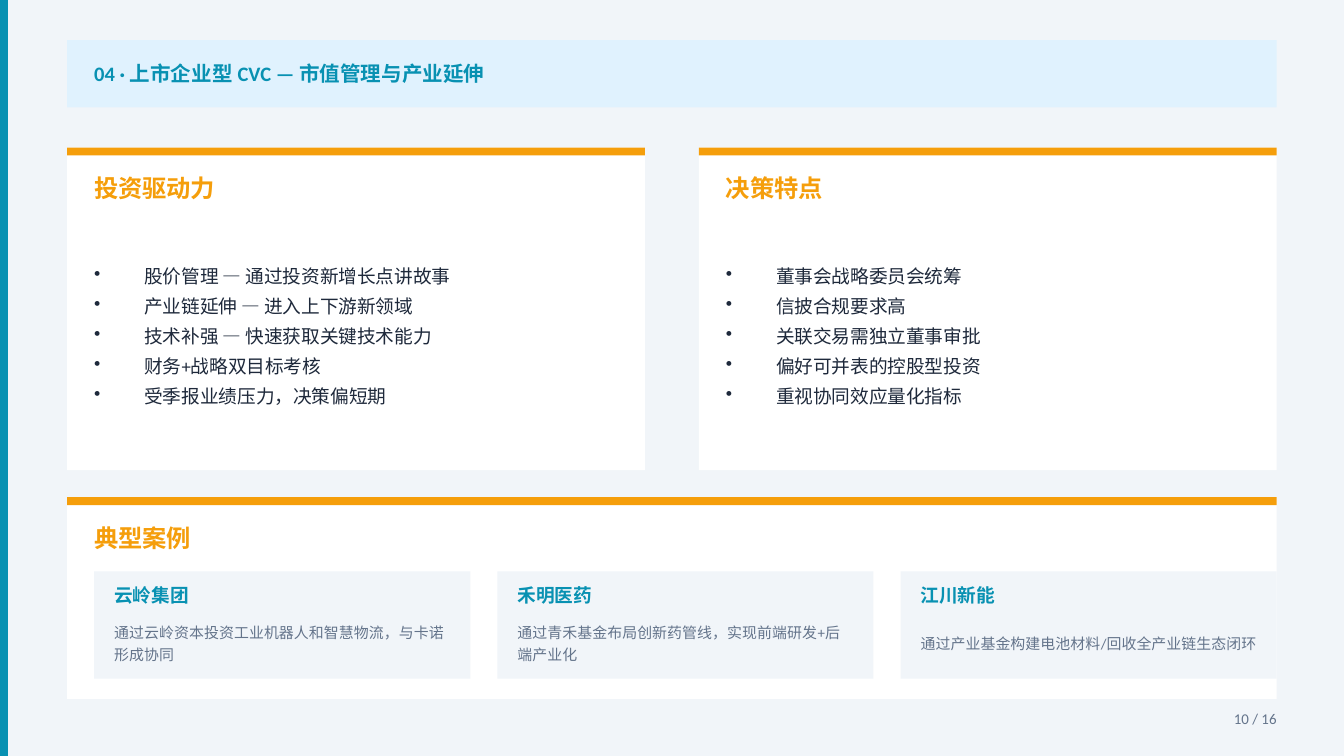
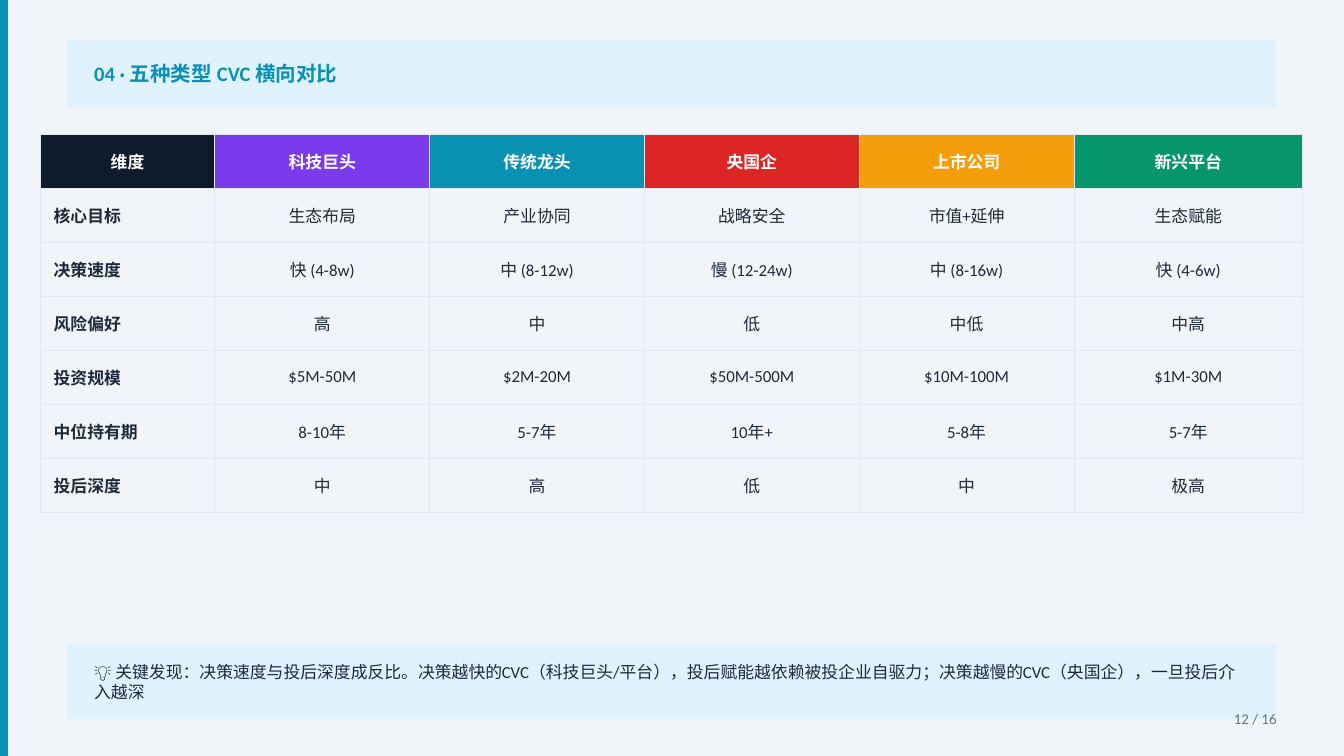
from dataclasses import dataclass

from lxml import etree
from pptx import Presentation
from pptx.dml.color import RGBColor
from pptx.enum.shapes import MSO_SHAPE
from pptx.enum.text import MSO_ANCHOR, PP_ALIGN
from pptx.oxml.ns import qn
from pptx.slide import Slide
from pptx.table import _Cell
from pptx.text.text import TextFrame
from pptx.util import Cm, Pt

RECTANGLE = MSO_SHAPE.RECTANGLE
MIDDLE = MSO_ANCHOR.MIDDLE
LEFT, CENTER, RIGHT = PP_ALIGN.LEFT, PP_ALIGN.CENTER, PP_ALIGN.RIGHT

FONT = "Calibri"
PAGE, WHITE, PALE = "F1F5F9", "FFFFFF", "E0F2FE"
TEAL, AMBER, INK, GREY = "0891B2", "F59E0B", "1E293B", "64748B"
NAVY, VIOLET, RED, GREEN = "0F1B2D", "7C3AED", "DC2626", "059669"
GRID = "E2E8F0"

SLIDE_WIDTH, SLIDE_HEIGHT = 25.4, 14.29
MARGIN, CONTENT_WIDTH = 1.27, 22.86
PADDING, STRIPE = 0.51, 0.15
TOTAL_PAGES = 16


@dataclass(frozen=True)
class Box:
    """Place and size in centimetres."""
    left: float
    top: float
    width: float
    height: float


@dataclass(frozen=True)
class Panel:
    """White card with a coloured top edge and a heading."""
    heading: str
    box: Box
    bullets: tuple[str, ...] = ()


@dataclass(frozen=True)
class Case:
    """Example investor and what it does."""
    name: str
    summary: str


@dataclass(frozen=True)
class Column:
    """Table column with its header colour and width in centimetres."""
    heading: str
    color: str
    width: float


PANEL_TOP, PANEL_WIDTH, PANEL_HEIGHT = 2.79, 10.92, 6.1
PANELS = (
    Panel("投资驱动力", Box(MARGIN, PANEL_TOP, PANEL_WIDTH, PANEL_HEIGHT), (
        "股价管理 — 通过投资新增长点讲故事",
        "产业链延伸 — 进入上下游新领域",
        "技术补强 — 快速获取关键技术能力",
        "财务+战略双目标考核",
        "受季报业绩压力，决策偏短期",
    )),
    Panel("决策特点", Box(13.21, PANEL_TOP, PANEL_WIDTH, PANEL_HEIGHT), (
        "董事会战略委员会统筹",
        "信披合规要求高",
        "关联交易需独立董事审批",
        "偏好可并表的控股型投资",
        "重视协同效应量化指标",
    )),
    Panel("典型案例", Box(MARGIN, 9.4, CONTENT_WIDTH, 3.81)),
)
CASES = (
    Case("云岭集团", "通过云岭资本投资工业机器人和智慧物流，与卡诺形成协同"),
    Case("禾明医药", "通过青禾基金布局创新药管线，实现前端研发+后端产业化"),
    Case("江川新能", "通过产业基金构建电池材料/回收全产业链生态闭环"),
)
COLUMNS = (
    Column("维度", NAVY, 3.3),
    Column("科技巨头", VIOLET, 4.06),
    Column("传统龙头", TEAL, 4.06),
    Column("央国企", RED, 4.06),
    Column("上市公司", AMBER, 4.06),
    Column("新兴平台", GREEN, 4.32),
)
ROWS = (
    ("核心目标", "生态布局", "产业协同", "战略安全", "市值+延伸", "生态赋能"),
    ("决策速度", "快 (4-8w)", "中 (8-12w)", "慢 (12-24w)", "中 (8-16w)", "快 (4-6w)"),
    ("风险偏好", "高", "中", "低", "中低", "中高"),
    ("投资规模", "$5M-50M", "$2M-20M", "$50M-500M", "$10M-100M", "$1M-30M"),
    ("中位持有期", "8-10年", "5-7年", "10年+", "5-8年", "5-7年"),
    ("投后深度", "中", "高", "低", "中", "极高"),
)
FINDING = (
    "💡 关键发现：决策速度与投后深度成反比。"
    "决策越快的CVC（科技巨头/平台），投后赋能越依赖被投企业自驱力；"
    "决策越慢的CVC（央国企），一旦投后介入越深"
)


def rgb(color: str) -> RGBColor:
    """Turn a hex string into a colour."""
    return RGBColor.from_string(color)


def write(frame: TextFrame, *lines: str, size: float, color: str, bold: bool = False,
          align: PP_ALIGN = LEFT, bullet: bool = False, space_after: float = 0,
          line_spacing: float = 1.0) -> None:
    """Fill a text frame with one paragraph per line."""
    for index, line in enumerate(lines):
        paragraph = frame.add_paragraph() if index else frame.paragraphs[0]
        if bullet:
            properties = paragraph._p.get_or_add_pPr()
            properties.set("marL", str(Cm(0.95)))
            properties.set("indent", str(-Cm(0.95)))
            etree.SubElement(properties, qn("a:buChar")).set("char", "•")
        paragraph.alignment = align
        paragraph.line_spacing = line_spacing
        paragraph.space_after = Pt(space_after)
        run = paragraph.add_run()
        run.text = line
        run.font.name = FONT
        run.font.size = Pt(size)
        run.font.bold = bold
        run.font.color.rgb = rgb(color)


def add_text(slide: Slide, box: Box, *lines: str, inset: bool = False, **text_format) -> None:
    """Add a wrapped, vertically centred text box."""
    shape = slide.shapes.add_textbox(Cm(box.left), Cm(box.top), Cm(box.width), Cm(box.height))
    frame = shape.text_frame
    frame.word_wrap = True
    frame.vertical_anchor = MIDDLE
    if not inset:
        frame.margin_left = frame.margin_right = frame.margin_top = frame.margin_bottom = 0
    write(frame, *lines, **text_format)


def add_rectangle(slide: Slide, box: Box, color: str) -> None:
    """Add a plain filled rectangle."""
    shape = slide.shapes.add_shape(
        RECTANGLE, Cm(box.left), Cm(box.top), Cm(box.width), Cm(box.height))
    shape.shadow.inherit = False
    shape.fill.solid()
    shape.fill.fore_color.rgb = rgb(color)
    shape.line.fill.background()


def add_base_slide(presentation: Presentation, title: str) -> Slide:
    """Add a slide with background, side bar and title band."""
    slide = presentation.slides.add_slide(presentation.slide_layouts[6])
    slide.background.fill.solid()
    slide.background.fill.fore_color.rgb = rgb(PAGE)
    add_rectangle(slide, Box(0, 0, STRIPE, SLIDE_HEIGHT), TEAL)
    add_rectangle(slide, Box(MARGIN, 0.76, CONTENT_WIDTH, 1.27), PALE)
    add_text(slide, Box(MARGIN + PADDING, 0.76, 21.59, 1.27), title,
             size=11, color=TEAL, bold=True)
    return slide


def add_page_number(slide: Slide, number: int) -> None:
    """Add the page count at the lower right."""
    add_text(slide, Box(22.35, 13.21, 2.03, 0.76), f"{number} / {TOTAL_PAGES}",
             size=8, color=GREY, align=RIGHT, inset=True)


def add_panel(slide: Slide, panel: Panel) -> None:
    """Draw a panel with its heading and bullets."""
    box = panel.box
    left = box.left + PADDING
    add_rectangle(slide, box, WHITE)
    add_rectangle(slide, Box(box.left, box.top, box.width, STRIPE), AMBER)
    add_text(slide, Box(left, box.top + 0.38, 7.62, 0.76), panel.heading,
             size=13, color=AMBER, bold=True)
    if panel.bullets:
        add_text(slide, Box(left, box.top + 1.4, 9.65, 4.32), *panel.bullets,
                 size=10, color=INK, bullet=True, space_after=4)


def add_case(slide: Slide, case: Case, left: float) -> None:
    """Draw one example card."""
    text_left = left + 0.38
    add_rectangle(slide, Box(left, 10.8, 7.11, 2.03), PAGE)
    add_text(slide, Box(text_left, 10.92, 6.35, 0.64), case.name,
             size=10, color=TEAL, bold=True)
    add_text(slide, Box(text_left, 11.56, 6.35, 1.14), case.summary,
             size=8, color=GREY, line_spacing=1.2)


def add_borders(cell: _Cell) -> None:
    """Give a cell thin lines on all four sides."""
    properties = cell._tc.get_or_add_tcPr()
    for side in ("a:lnL", "a:lnR", "a:lnT", "a:lnB"):
        line = etree.SubElement(properties, qn(side))
        line.set("w", str(Pt(0.5)))
        fill = etree.SubElement(line, qn("a:solidFill"))
        etree.SubElement(fill, qn("a:srgbClr")).set("val", GRID)


def add_comparison_table(slide: Slide) -> None:
    """Add the table that compares the five investor types."""
    row_height = 1.02
    records = (tuple(column.heading for column in COLUMNS), *ROWS)
    width = sum(column.width for column in COLUMNS)
    table = slide.shapes.add_table(
        len(records), len(COLUMNS), Cm(0.76), Cm(2.54),
        Cm(width), Cm(row_height * len(records))).table
    table.first_row = table.horz_banding = False
    for index, column in enumerate(COLUMNS):
        table.columns[index].width = Cm(column.width)
    for row_index, record in enumerate(records):
        table.rows[row_index].height = Cm(row_height)
        header = row_index == 0
        for column_index, value in enumerate(record):
            cell = table.cell(row_index, column_index)
            label = column_index == 0
            add_borders(cell)
            if header:
                cell.fill.solid()
                cell.fill.fore_color.rgb = rgb(COLUMNS[column_index].color)
            else:
                cell.fill.background()
            cell.vertical_anchor = MIDDLE
            write(cell.text_frame, value, size=9, color=WHITE if header else INK,
                  bold=header or label, align=LEFT if label and not header else CENTER)


def build_listed_company_slide(presentation: Presentation) -> None:
    """Build the slide on listed-company investors."""
    slide = add_base_slide(presentation, "04 · 上市企业型 CVC — 市值管理与产业延伸")
    for panel in PANELS:
        add_panel(slide, panel)
    for index, case in enumerate(CASES):
        add_case(slide, case, MARGIN + PADDING + index * 7.62)
    add_page_number(slide, 10)


def build_comparison_slide(presentation: Presentation) -> None:
    """Build the slide that compares the five types."""
    slide = add_base_slide(presentation, "04 · 五种类型 CVC 横向对比")
    add_comparison_table(slide)
    add_rectangle(slide, Box(MARGIN, 12.19, CONTENT_WIDTH, 1.4), PALE)
    add_text(slide, Box(MARGIN + PADDING, 12.19, 21.84, 1.4), FINDING, size=9, color=INK)
    add_page_number(slide, 12)


def main() -> None:
    """Build and save the presentation."""
    presentation = Presentation()
    presentation.slide_width = Cm(SLIDE_WIDTH)
    presentation.slide_height = Cm(SLIDE_HEIGHT)
    build_listed_company_slide(presentation)
    build_comparison_slide(presentation)
    presentation.save("out.pptx")


if __name__ == "__main__":
    main()
